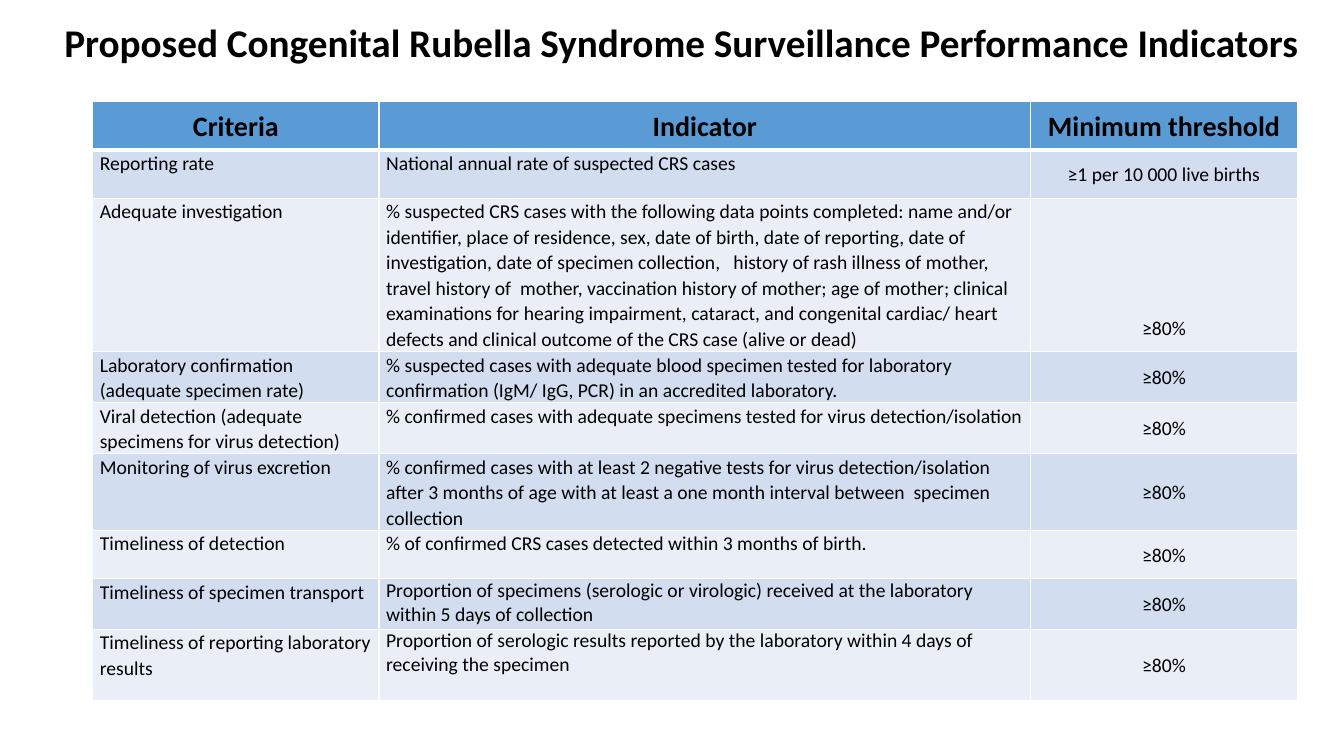
from lxml import etree
from pptx import Presentation
from pptx.dml.color import RGBColor
from pptx.enum.text import MSO_ANCHOR, MSO_AUTO_SIZE, PP_ALIGN
from pptx.oxml.ns import qn
from pptx.util import Inches, Pt

TOP, MIDDLE, BOTTOM = MSO_ANCHOR.TOP, MSO_ANCHOR.MIDDLE, MSO_ANCHOR.BOTTOM
LEFT, CENTER = PP_ALIGN.LEFT, PP_ALIGN.CENTER
NO_FIT = MSO_AUTO_SIZE.NONE

FONT = "Calibri"
BLACK, WHITE = "000000", "FFFFFF"
HEADER_FILL = "5B9BD5"
BAND_FILLS = ("EAEFF7", "D2DEEF")
TITLE = "Proposed Congenital Rubella Syndrome Surveillance Performance Indicators"
COL_WIDTHS = (2.84, 6.46, 2.65)
ROW_HEIGHTS = (0.48, 0.48, 1.5, 0.5, 0.5, 0.75, 0.48, 0.5, 0.71)
LINE_SPACING = 1.07
INVESTIGATION_ROW = 2
SINGLE_SPACED_ROWS = (7, 8)
ROWS = (
    ("Criteria", "Indicator", "Minimum threshold"),
    ("Reporting rate",
     "National annual rate of suspected CRS cases",
     "≥1 per 10 000 live births"),
    ("Adequate investigation",
     "% suspected CRS cases with the following data points completed: name and/or "
     "identifier, place of residence, sex, date of birth, date of reporting, date of "
     "investigation, date of specimen collection,   history of rash illness of mother, "
     "travel history of  mother, vaccination history of mother; age of mother; clinical "
     "examinations for hearing impairment, cataract, and congenital cardiac/ heart "
     "defects and clinical outcome of the CRS case (alive or dead)",
     "≥80%"),
    ("Laboratory confirmation (adequate specimen rate)",
     "% suspected cases with adequate blood specimen tested for laboratory "
     "confirmation (IgM/ IgG, PCR) in an accredited laboratory.",
     "≥80%"),
    ("Viral detection (adequate specimens for virus detection)",
     "% confirmed cases with adequate specimens tested for virus detection/isolation",
     "≥80%"),
    ("Monitoring of virus excretion",
     "% confirmed cases with at least 2 negative tests for virus detection/isolation "
     "after 3 months of age with at least a one month interval between  specimen "
     "collection",
     "≥80%"),
    ("Timeliness of detection",
     "% of confirmed CRS cases detected within 3 months of birth.",
     "≥80%"),
    ("Timeliness of specimen transport",
     "Proportion of specimens (serologic or virologic) received at the laboratory "
     "within 5 days of collection",
     "≥80%"),
    ("Timeliness of reporting laboratory results",
     "Proportion of serologic results reported by the laboratory within 4 days of "
     "receiving the specimen",
     "≥80%"),
)


def rgb(color):
    """Return the colour for a hex string."""
    return RGBColor.from_string(color)


def set_text(tf, text, size, bold, align, spacing=1.0):
    """Write one formatted paragraph into a text frame."""
    p = tf.paragraphs[0]
    p.text = text
    p.alignment = align
    p.line_spacing = spacing
    p.font.name = FONT
    p.font.size = Pt(size)
    p.font.bold = bold
    p.font.color.rgb = rgb(BLACK)


def add_title(s):
    """Place and format the slide title."""
    title = s.shapes.title
    title.left, title.top = Inches(0.27), Inches(0.13)
    title.width, title.height = Inches(12.97), Inches(0.88)
    tf = title.text_frame
    tf.auto_size = NO_FIT
    tf.vertical_anchor = TOP
    set_text(tf, TITLE, 28, True, CENTER)


def set_borders(cell, bottom):
    """Give a cell white borders, the lower one of its own width."""
    tc_pr = cell._tc.get_or_add_tcPr()
    for side, width in (("L", 1), ("R", 1), ("T", 1), ("B", bottom)):
        ln = etree.SubElement(tc_pr, qn(f"a:ln{side}"), w=str(Pt(width)))
        fill = etree.SubElement(ln, qn("a:solidFill"))
        etree.SubElement(fill, qn("a:srgbClr"), val=WHITE)


def format_cell(cell, text, row, col):
    """Fill one table cell according to its row and column."""
    header, threshold = row == 0, col == 2
    set_borders(cell, 3 if header else 1)
    cell.fill.solid()
    cell.fill.fore_color.rgb = rgb(HEADER_FILL if header else BAND_FILLS[row % 2])
    cell.margin_left = cell.margin_right = Inches(0.07)
    cell.margin_top = cell.margin_bottom = 0
    cell.vertical_anchor = MIDDLE if header or threshold else TOP
    if threshold and row == INVESTIGATION_ROW:
        cell.vertical_anchor = BOTTOM
        cell.margin_bottom = Inches(0.11)
    single = col == 1 and row in SINGLE_SPACED_ROWS
    set_text(cell.text_frame, text, 20 if header else 14, header,
             CENTER if header or threshold else LEFT,
             1.0 if single else LINE_SPACING)


def add_indicator_table(s):
    """Add the table of indicators and thresholds."""
    table = s.shapes.add_table(
        len(ROWS), len(COL_WIDTHS), Inches(0.92), Inches(1.01),
        Inches(sum(COL_WIDTHS)), Inches(sum(ROW_HEIGHTS))).table
    for column, width in zip(table.columns, COL_WIDTHS):
        column.width = Inches(width)
    for row, (texts, height) in enumerate(zip(ROWS, ROW_HEIGHTS)):
        table.rows[row].height = Inches(height)
        for col, text in enumerate(texts):
            format_cell(table.cell(row, col), text, row, col)


def main():
    """Build the slide and save it."""
    prs = Presentation()
    prs.slide_width, prs.slide_height = Inches(13.33), Inches(7.5)
    s = prs.slides.add_slide(prs.slide_layouts[5])
    add_title(s)
    add_indicator_table(s)
    prs.save("out.pptx")


if __name__ == "__main__":
    main()
